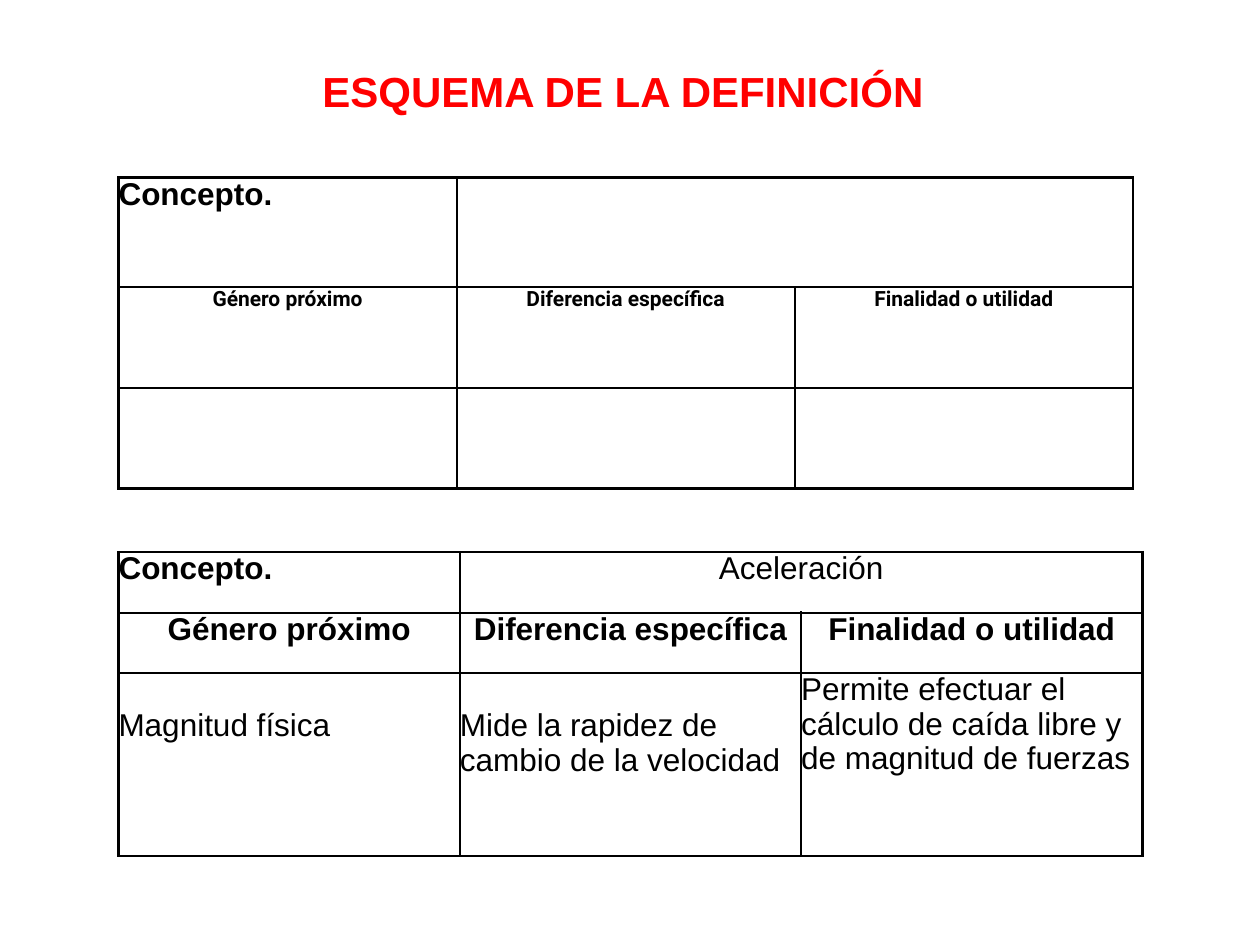
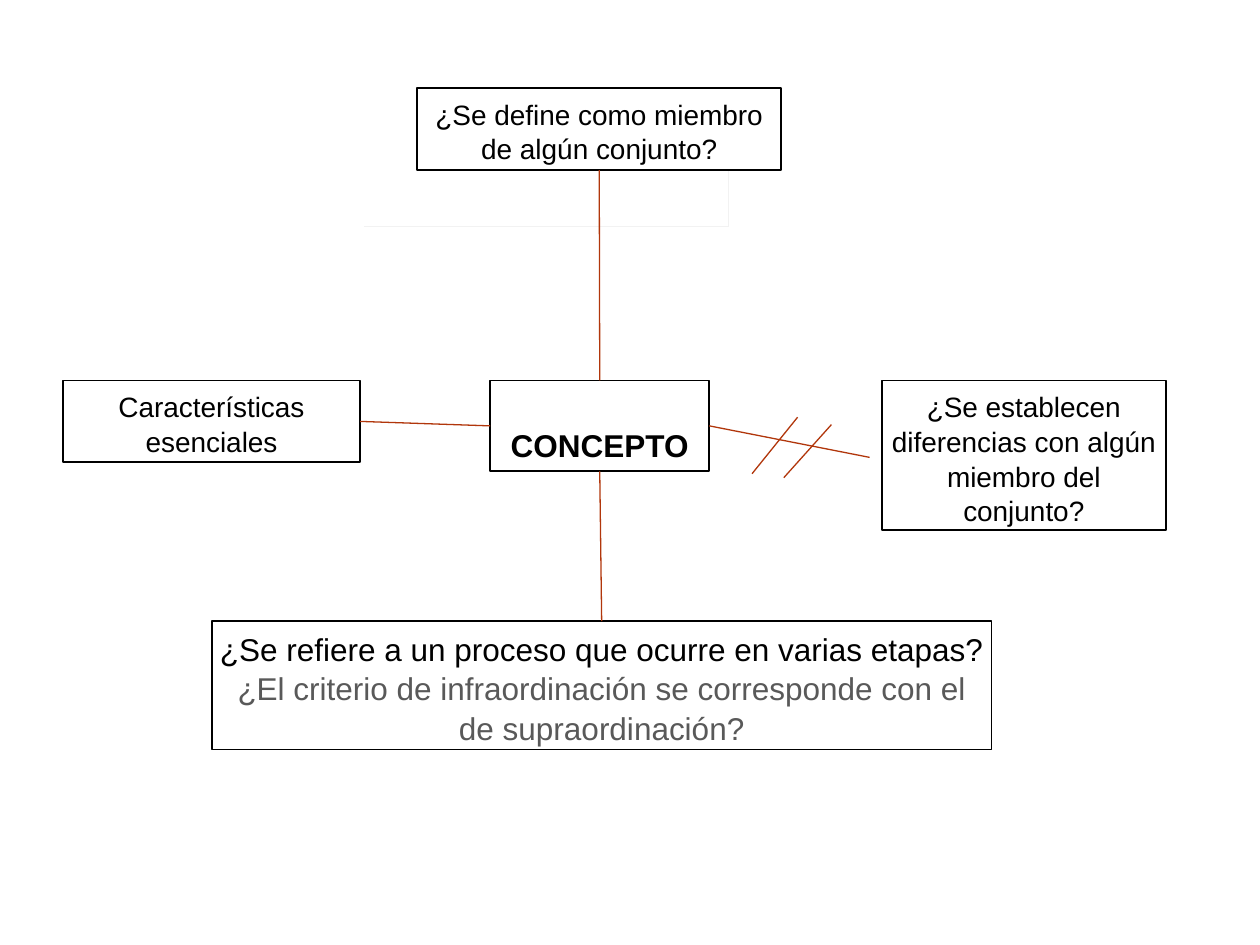
from lxml import etree
from pptx import Presentation
from pptx import util as u
from pptx.dml.color import RGBColor
from pptx.enum import shapes, text
from pptx.oxml import ns

COLORS = {"ink": "000000", "title": "FF0000", "paper": "FFFFFF", "muted": "595959",
          "link": "B1360B", "edge": "F2F2F2"}
FONT = "Arial"
CENTER, LEFT = text.PP_ALIGN.CENTER, text.PP_ALIGN.LEFT
TOP, SIDE_LEFT, BOTTOM, SIDE_RIGHT = range(4)
HEADINGS = ["Género próximo", "Diferencia específica", "Finalidad o utilidad"]


def color(name):
    """Return the named colour of the palette."""
    return RGBColor.from_string(COLORS[name])


def cms(*lengths):
    """Turn plain numbers into centimetre lengths."""
    return [u.Cm(length) for length in lengths]


def style(para, size, ink="ink", bold=False, align=CENTER, font=FONT, spacing=1.0):
    """Format a paragraph and its runs."""
    para.alignment = align
    para.line_spacing = spacing
    for span in para.runs:
        span.font.name, span.font.size, span.font.bold = font, u.Pt(size), bold
        span.font.color.rgb = color(ink)


def set_margins(holder, margin):
    """Give a cell or text frame the same margin on every side."""
    for side in ("left", "right", "top", "bottom"):
        setattr(holder, f"margin_{side}", u.Cm(margin))


def add_title(page, wording, box):
    """Place the red slide title."""
    frame = page.shapes.add_textbox(*cms(*box)).text_frame
    set_margins(frame, 0.15)
    frame.word_wrap = True
    frame.vertical_anchor = text.MSO_ANCHOR.MIDDLE
    frame.text = wording
    style(frame.paragraphs[0], 24, "title", True, LEFT)


def outline_cell(cell):
    """Draw the four borders of a cell."""
    props = cell._tc.get_or_add_tcPr()
    for index, side in enumerate(("lnL", "lnR", "lnT", "lnB")):
        border = etree.Element(ns.qn(f"a:{side}"), w=str(u.Pt(1.5)))
        fill = etree.SubElement(border, ns.qn("a:solidFill"))
        etree.SubElement(fill, ns.qn("a:srgbClr"), val=COLORS["ink"])
        props.insert(index, border)


def add_definition(page, box, row_heights, concept="", answers=("", "", ""),
                   heading_size=18, heading_font=FONT):
    """Place a definition table: concept, three headings and their answers."""
    grid = page.shapes.add_table(3, 3, *cms(*box)).table
    grid.first_row = grid.horz_banding = False
    for column in grid.columns:
        column.width = u.Cm(box[2] / 3)
    for row, height in zip(grid.rows, row_heights):
        row.height = u.Cm(height)
    for cell in grid.iter_cells():
        set_margins(cell, 0)
        cell.fill.background()
        outline_cell(cell)
    grid.cell(0, 1).merge(grid.cell(0, 2))

    def write(row, column, wording, size=18, **look):
        if wording:
            cell = grid.cell(row, column)
            cell.text = wording
            style(cell.text_frame.paragraphs[0], size, spacing=0.98, **look)

    write(0, 0, "Concepto.", bold=True, align=LEFT)
    write(0, 1, concept)
    for column, (heading, answer) in enumerate(zip(HEADINGS, answers)):
        write(1, column, heading, heading_size, bold=True, font=heading_font)
        write(2, column, answer, align=LEFT)
    return grid


def add_box(page, box, lines, size=16, bold=False, anchor=text.MSO_ANCHOR.TOP):
    """Place an outlined box; lines holds pairs of wording and colour."""
    shape = page.shapes.add_shape(shapes.MSO_SHAPE.RECTANGLE, *cms(*box))
    shape.shadow.inherit = False
    shape.fill.solid()
    shape.fill.fore_color.rgb = color("paper")
    shape.line.color.rgb = color("ink")
    shape.line.width = u.Pt(1)
    frame = shape.text_frame
    set_margins(frame, 0.15)
    frame.word_wrap = True
    frame.vertical_anchor = anchor
    frame.text = "\n".join(wording for wording, _ in lines)
    for para, (_, ink) in zip(frame.paragraphs, lines):
        style(para, size, ink, bold, spacing=1.04)
    return shape


def add_line(page, ends=(0, 0, 0, 0), ink="link", width=0.75, begin=None, end=None):
    """Draw a straight line, joined to shapes where begin or end is given."""
    line = page.shapes.add_connector(shapes.MSO_CONNECTOR.STRAIGHT, *cms(*ends))
    line.line.color.rgb = color(ink)
    line.line.width = u.Pt(width)
    etree.SubElement(line._element.spPr, ns.qn("a:effectLst"))
    if begin:
        line.begin_connect(*begin)
    if end:
        line.end_connect(*end)


def build_definition_page(page):
    """Build the slide with the blank scheme and the worked example."""
    add_title(page, "ESQUEMA DE LA DEFINICIÓN", (6.35, 1.17, 12.95, 1.3))
    add_definition(page, (2.39, 3.58, 20.45, 6.27), (2.21, 2.03, 2.03),
                   heading_size=12, heading_font="Roboto")
    example = add_definition(
        page, (2.39, 11.13, 20.64, 6.13), (1.22, 1.22, 3.69), "Aceleración",
        ("Magnitud física", "Mide la rapidez de cambio de la velocidad",
         "Permite efectuar el cálculo de caída libre y de magnitud de fuerzas"))
    for column in range(2):
        example.cell(2, column).margin_top = u.Cm(0.72)


def build_concept_page(page):
    """Build the concept map around the central box."""
    for ends in ((14.68, 1.78, 14.68, 4.57), (7.34, 4.57, 14.68, 4.57)):
        add_line(page, ends, "edge", 0.25)
    concept = add_box(page, (9.88, 7.67, 4.42, 1.83), [("CONCEPTO", "ink")], 18, True,
                      text.MSO_ANCHOR.BOTTOM)
    member = add_box(page, (8.41, 1.78, 7.34, 1.65),
                     [("¿Se define como miembro de algún conjunto?", "ink")])
    features = add_box(page, (1.27, 7.67, 5.99, 1.65), [("Características esenciales", "ink")])
    add_box(page, (17.78, 7.67, 5.72, 3.02),
            [("¿Se establecen diferencias con algún miembro del conjunto?", "ink")])
    process = add_box(page, (4.27, 12.52, 15.72, 2.59), [
        ("¿Se refiere a un proceso que ocurre en varias etapas?", "ink"),
        ("¿El criterio de infraordinación se corresponde con el de supraordinación?", "muted")],
        18)
    add_line(page, begin=(features, SIDE_RIGHT), end=(concept, SIDE_LEFT))
    add_line(page, (17.53, 9.22, 14.3, 8.59), end=(concept, SIDE_RIGHT))
    for slash in ((16.08, 8.41, 15.16, 9.55), (16.76, 8.56, 15.8, 9.63)):
        add_line(page, slash)
    add_line(page, begin=(member, BOTTOM), end=(concept, TOP))
    add_line(page, begin=(process, TOP), end=(concept, BOTTOM))


def main():
    """Build the deck and save it."""
    deck = Presentation()
    deck.slide_width, deck.slide_height = cms(25.4, 19.05)
    for build in (build_definition_page, build_concept_page):
        build(deck.slides.add_slide(deck.slide_layouts[6]))
    deck.save("out.pptx")


if __name__ == "__main__":
    main()
